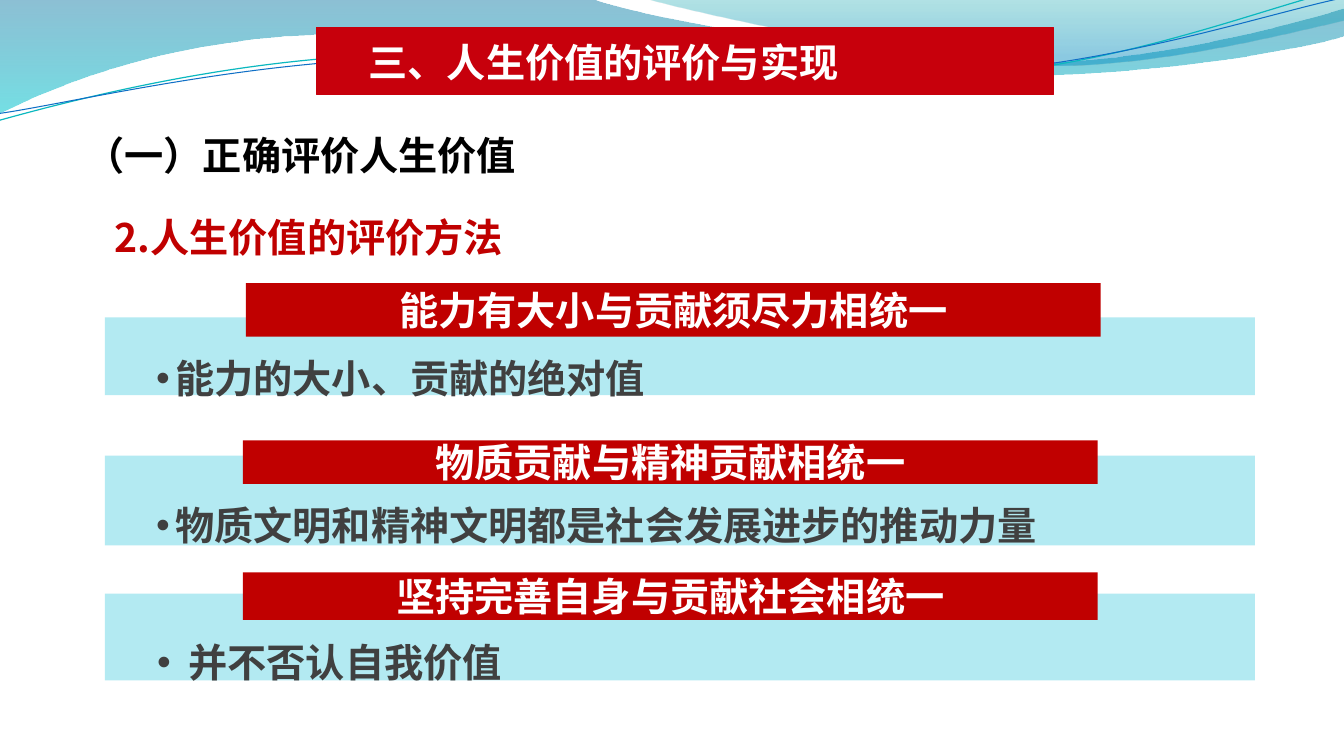
"""Build the slide on judging and realising the value of life."""
from lxml.etree import SubElement
from pptx import Presentation
from pptx.dml.color import RGBColor
from pptx.enum.shapes import MSO_SHAPE as Shape
from pptx.enum.text import MSO_ANCHOR as Anchor, MSO_AUTO_SIZE as Auto, PP_ALIGN as Align
from pptx.oxml.ns import qn
from pptx.util import Pt

PX = 9144
FONT = "Noto Sans CJK SC"
RED = RGBColor(0xC0, 0x00, 0x00)
TITLE = RGBColor(0xC7, 0x00, 0x0C)
PALE = RGBColor(0xB3, 0xEA, 0xF2)
GRAY = RGBColor(0x40, 0x40, 0x40)
BLACK = RGBColor(0x00, 0x00, 0x00)
WHITE = RGBColor(0xFF, 0xFF, 0xFF)
NAVY = RGBColor(0x00, 0x74, 0xA1)
AQUA = RGBColor(0x00, 0xC6, 0xCF)
TEAL = RGBColor(0x00, 0xA1, 0xA9)
AZURE = RGBColor(0x00, 0x8B, 0xBF)
CYAN = RGBColor(0x0A, 0xB8, 0xBF)
BLUE = RGBColor(0x0F, 0x6F, 0xC6)

deck = Presentation()
deck.slide_width, deck.slide_height = 750 * PX * 16 // 9, 750 * PX
slide = deck.slides.add_slide(deck.slide_layouts[6])
shapes = slide.shapes


def rect(box, color):
    """Add a plain filled rectangle."""
    shape = shapes.add_shape(Shape.RECTANGLE, *[n * PX for n in box])
    shape.shadow.inherit = False
    shape.fill.solid()
    shape.fill.fore_color.rgb = color
    shape.line.fill.background()
    return shape


def write(shape, text, color, space=1.0, inset=(10, 5), hang=0):
    """Write one bold line, with a bullet if it has a hanging indent."""
    frame = shape.text_frame
    frame.word_wrap = True
    frame.margin_left = frame.margin_right = inset[0] * PX
    frame.margin_top = frame.margin_bottom = inset[1] * PX
    par = frame.paragraphs[0]
    par.text = text
    par.line_spacing = space
    props = par._p.get_or_add_pPr()
    if hang:
        props.set("marL", str(hang * PX))
        props.set("indent", str(-hang * PX))
        SubElement(props, qn("a:buFont"), typeface="Arial")
        SubElement(props, qn("a:buChar"), char="•")
    font = par.font
    font.size, font.bold, font.name = Pt(28), True, FONT
    font.color.rgb = color
    SubElement(props.find(qn("a:defRPr")), qn("a:ea"), typeface=FONT)
    return par


waves = [
    ([(0, 0), (587, -1), (634, 17, 885, 63, 1011, 63), (1138, 63, 1278, 26, 1333, 9),
      (1335, 36), (1311, 44, 1160, 76, 994, 75), (829, 75, 509, 28, 343, 34),
      (172, 36, 61, 83, -1, 113)], [(0, NAVY, 45), (1, AQUA, 55)], None),
    ([(639, -1), (679, 11, 909, 62, 1025, 65), (1141, 69, 1282, 32, 1333, 21),
      (1333, 0)], [(0, TEAL, 30), (0.8, AZURE, 45)], None),
    ([(-3, 88), (63, 73, 211, 41, 369, 41), (528, 42, 788, 93, 949, 89),
      (1109, 87, 1254, 36, 1333, 21)], None, (CYAN, 0.85)),
    ([(-2, 81), (62, 75, 218, 45, 378, 45), (537, 47, 795, 88, 954, 86),
      (1114, 83, 1256, 42, 1336, 29)], None, (BLUE, 0.75)),
]
for path, stops, line in waves:
    dots = [dot for part in path for dot in zip(part[::2], part[1::2])]
    pen = shapes.build_freeform(*dots[0], scale=PX)
    pen.add_line_segments(dots[1:], close=bool(stops))
    wave = pen.convert_to_shape()
    wave.shadow.inherit = False
    legs = iter(wave._element.spPr.findall(".//" + qn("a:lnTo")))
    for part in path[1:]:
        leg = next(legs)
        if len(part) == 6:
            leg.tag = qn("a:cubicBezTo")
            for extra in (next(legs), next(legs)):
                leg.append(extra[0])
                extra.getparent().remove(extra)
    if stops:
        wave.line.fill.background()
        wave.fill.gradient()
        wave.fill.gradient_angle = 270
        for stop, (place, color, alpha) in zip(wave.fill.gradient_stops, stops):
            stop.position = place
            stop.color.rgb = color
            tint = wave._element.spPr.findall(".//" + qn("a:srgbClr"))[-1 if place else 0]
            SubElement(tint, qn("a:alpha"), val=str(alpha * 1000))
    else:
        wave.rotation = 357.3
        wave.fill.background()
        wave.line.color.rgb, wave.line.width = line[0], Pt(line[1])

rows = [
    ((315, 77), (244, 281, 53), "能力有大小与贡献须尽力相统一",
     (147, 334, 842), 19, "能力的大小、贡献的绝对值"),
    ((452, 89), (241, 437, 43), "物质贡献与精神贡献相统一",
     (147, 479, 1097), 19, "物质文明和精神文明都是社会发展进步的推动力量"),
    ((589, 86), (241, 568, 47), "坚持完善自身与贡献社会相统一",
     (148, 615, 662), 31, "并不否认自我价值"),
]
for (top, high), (left, y, tall), head, (x, base, wide), hang, note in rows:
    rect((104, top, 1141, high), PALE)
    bar = rect((left, y, 848, tall), RED)
    bar.text_frame.vertical_anchor = Anchor.MIDDLE
    write(bar, head, WHITE, inset=(8, 4)).alignment = Align.CENTER
    body = shapes.add_textbox(x * PX, base * PX, wide * PX, 60 * PX)
    write(body, note, GRAY, 1.3, (8, 4), hang)
    body.text_frame.auto_size = Auto.SHAPE_TO_FIT_TEXT

plate = rect((314, 27, 731, 67), TITLE)
plate.line.color.rgb, plate.line.width = TITLE, Pt(0.75)
heads = [
    ((104, 183, 610, 81), "2.人生价值的评价方法", RED, 1.5),
    ((75, 102, 717, 81), "（一）正确评价人生价值", BLACK, 1.5),
    ((356, 33, 717, 57), "三、人生价值的评价与实现", WHITE, 1.0),
]
for box, text, color, space in heads:
    label = shapes.add_textbox(*[n * PX for n in box])
    write(label, text, color, space)
    label.text_frame.auto_size = Auto.SHAPE_TO_FIT_TEXT

deck.save("out.pptx")
